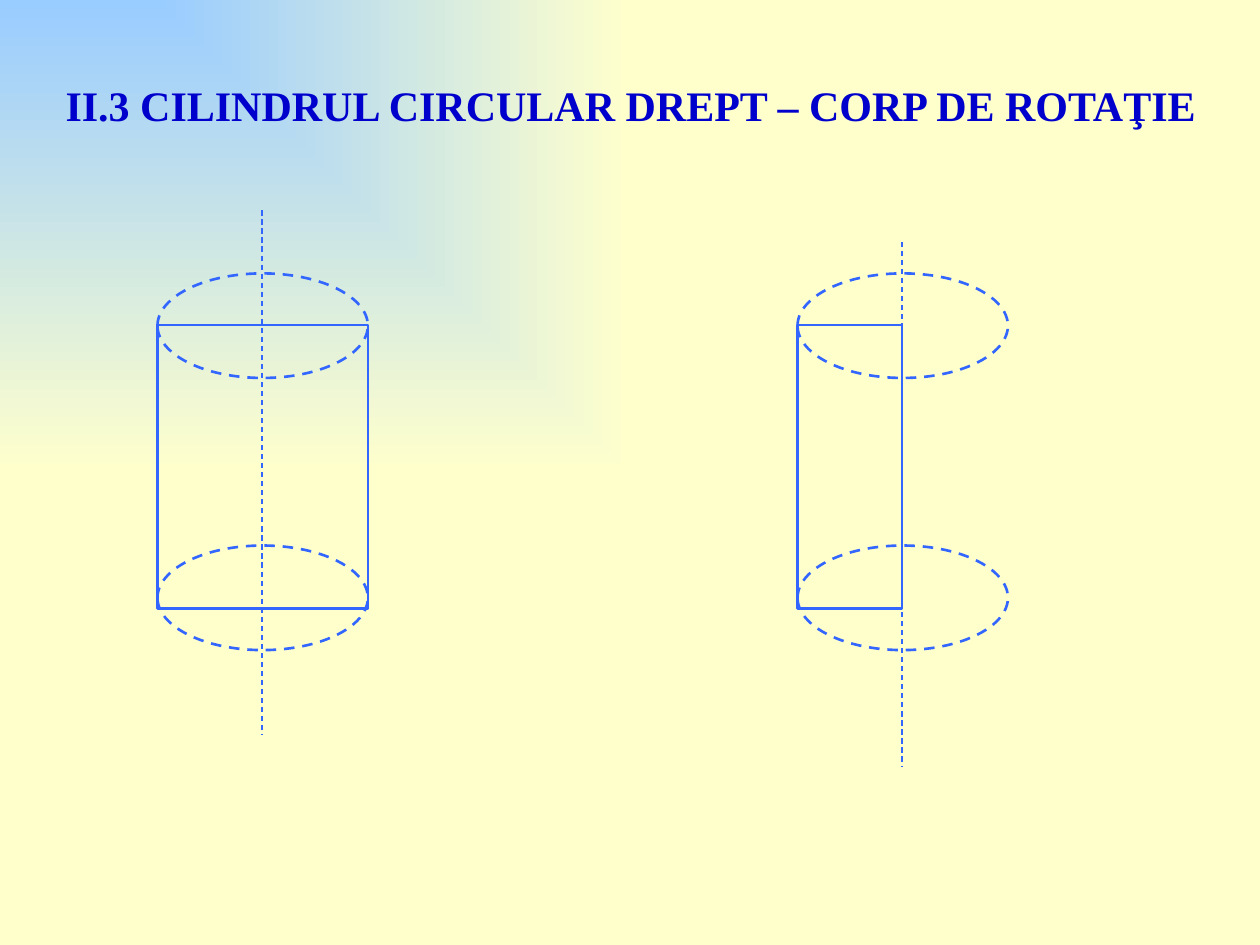
"""Build a slide showing a right circular cylinder as a solid of revolution."""
from lxml.etree import SubElement
from pptx import Presentation
from pptx.dml.color import RGBColor as RGB
from pptx.enum.dml import MSO_LINE as Dash
from pptx.enum.shapes import MSO_CONNECTOR as Link, MSO_SHAPE as Form
from pptx.enum.text import MSO_ANCHOR as Anchor, MSO_AUTO_SIZE as Fit, PP_ALIGN as Align
from pptx.oxml.ns import qn
from pptx.util import Inches, Pt

HUES = {"sky": "99CCFF", "cream": "FFFFCC", "title": "0000CC", "line": "3366FF"}


class Page:
    def __init__(self, deck, font):
        self.font = font
        self.slide = deck.slides.add_slide(deck.slide_layouts[5])

    def hue(self, name):
        return RGB.from_string(HUES[name])

    def ground(self, start, end):
        fill = self.slide.background.fill
        fill.gradient()
        for stop, name in zip(fill.gradient_stops, (start, end)):
            stop.color.rgb = self.hue(name)
        grad = next(self.slide.element.iter(qn("a:gradFill")))
        grad.remove(grad.find(qn("a:lin")))
        shade = SubElement(grad, qn("a:path"), {"path": "rect"})
        SubElement(shade, qn("a:fillToRect"), {"r": "100000", "b": "100000"})

    def title(self, text, x, y, w, h):
        box = self.slide.shapes.title
        box.left, box.top, box.width, box.height = map(Inches, (x, y, w, h))
        frame = box.text_frame
        frame.text = text
        frame.word_wrap = True
        frame.auto_size = Fit.SHAPE_TO_FIT_TEXT
        frame.vertical_anchor = Anchor.TOP
        para = frame.paragraphs[0]
        para.alignment = Align.LEFT
        font = para.font
        font.name, font.size, font.bold = self.font, Pt(24), True
        font.color.rgb = self.hue("title")

    def stroke(self, line, width, dash=None):
        line.color.rgb = self.hue("line")
        line.width = Pt(width)
        if dash:
            line.dash_style = dash

    def axis(self, x, top, end):
        line = self.slide.shapes.add_connector(
            Link.STRAIGHT, Inches(x), Inches(top), Inches(x), Inches(end))
        self.stroke(line.line, 0.75, Dash.DASH)
        SubElement(line.element.spPr, qn("a:effectLst"))

    def shape(self, form, x, y, w, h, dash=None):
        shape = self.slide.shapes.add_shape(form, *map(Inches, (x, y, w, h)))
        shape.shadow.inherit = False
        shape.fill.background()
        self.stroke(shape.line, 1.5, dash)

    def solid(self, x, top, width):
        """Draw the axis, the turning rectangle and both base circles."""
        self.axis(x + 0.83, top, top + 4.16)
        self.shape(Form.RECTANGLE, x, 2.58, width, 2.25)
        for y in (2.17, 4.33):
            self.shape(Form.OVAL, x, y, 1.67, 0.83, Dash.DASH)


def main():
    deck = Presentation()
    deck.slide_width, deck.slide_height = Inches(10), Inches(7.5)
    page = Page(deck, "Times New Roman")
    page.ground("sky", "cream")
    page.title("II.3 CILINDRUL CIRCULAR DREPT – CORP DE ROTAŢIE", 0.42, 0.58, 9.33, 0.5)
    page.solid(1.25, 1.67, 1.67)
    page.solid(6.33, 1.92, 0.83)
    deck.save("out.pptx")


if __name__ == "__main__":
    main()
